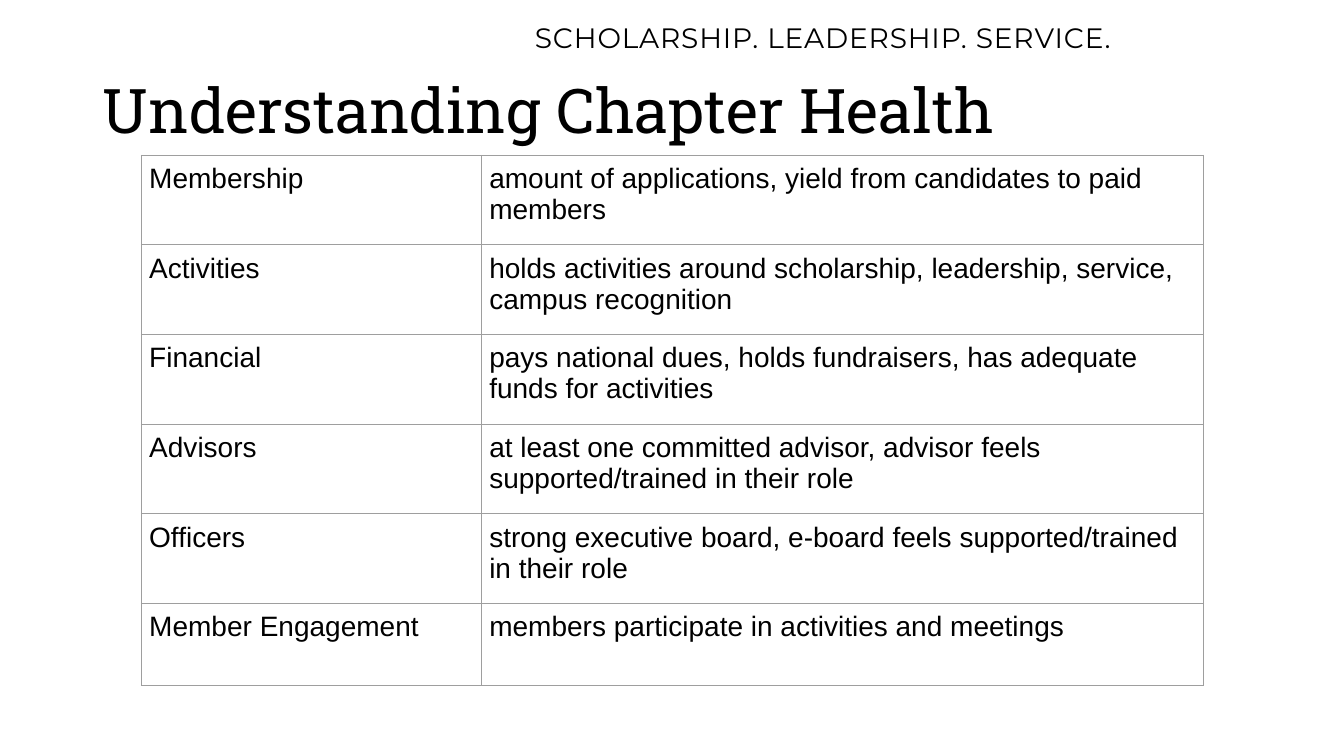
from lxml import etree
from pptx import Presentation
from pptx.dml.color import RGBColor
from pptx.enum.text import MSO_ANCHOR, PP_ALIGN
from pptx.oxml.ns import qn
from pptx.util import Cm, Pt

MIDDLE = MSO_ANCHOR.MIDDLE
TOP = MSO_ANCHOR.TOP
LEFT = PP_ALIGN.LEFT

MOTTO = "SCHOLARSHIP. LEADERSHIP. SERVICE."
TITLE = "Understanding Chapter Health"
HEALTH_AREAS = [
    ("Membership", "amount of applications, yield from candidates to paid members"),
    ("Activities", "holds activities around scholarship, leadership, service, campus recognition"),
    ("Financial", "pays national dues, holds fundraisers, has adequate funds for activities"),
    ("Advisors", "at least one committed advisor, advisor feels supported/trained in their role"),
    ("Officers", "strong executive board, e-board feels supported/trained in their role"),
    ("Member Engagement", "members participate in activities and meetings"),
]

COLORS = {"text": "000000", "border": "9E9E9E"}
COLUMN_WIDTHS = (8.57, 18.19)
ROW_HEIGHT, LAST_ROW_HEIGHT = 2.26, 2.06
CELL_INSET = Cm(0.2)
BORDER_WIDTH = Pt(0.6)


def write_text(frame, text, font, size, anchor=TOP, wrap=True, line_spacing=None, tracking=None):
    frame.word_wrap = wrap
    frame.vertical_anchor = anchor
    paragraph = frame.paragraphs[0]
    paragraph.alignment = LEFT
    if line_spacing:
        paragraph.line_spacing = line_spacing
    run = paragraph.add_run()
    run.text = text
    run.font.name = font
    run.font.size = Pt(size)
    run.font.color.rgb = RGBColor.from_string(COLORS["text"])
    if tracking:
        run.font._element.set("spc", str(round(tracking * 100)))


def add_borders(cell):
    properties = cell._tc.get_or_add_tcPr()
    for position, side in enumerate(("a:lnL", "a:lnR", "a:lnT", "a:lnB")):
        line = etree.Element(qn(side), w=str(BORDER_WIDTH))
        fill = etree.SubElement(line, qn("a:solidFill"))
        etree.SubElement(fill, qn("a:srgbClr"), val=COLORS["border"])
        properties.insert(position, line)


def add_health_table(slide):
    heights = [ROW_HEIGHT] * (len(HEALTH_AREAS) - 1) + [LAST_ROW_HEIGHT]
    table = slide.shapes.add_table(
        len(HEALTH_AREAS), len(COLUMN_WIDTHS),
        Cm(3.56), Cm(3.91), Cm(sum(COLUMN_WIDTHS)), Cm(sum(heights)),
    ).table
    table.first_row = False
    table.horz_banding = False
    for column, width in zip(table.columns, COLUMN_WIDTHS):
        column.width = Cm(width)
    for row, height, area in zip(table.rows, heights, HEALTH_AREAS):
        row.height = Cm(height)
        for cell, text in zip(row.cells, area):
            cell.fill.background()
            cell.margin_left = cell.margin_right = CELL_INSET
            cell.margin_top = cell.margin_bottom = CELL_INSET
            write_text(cell.text_frame, text, "Arial", 20)
            add_borders(cell)


def main():
    presentation = Presentation()
    presentation.slide_width = Cm(33.87)
    presentation.slide_height = Cm(19.05)
    slide = presentation.slides.add_slide(presentation.slide_layouts[5])

    motto = slide.shapes.add_textbox(Cm(13.23), Cm(0.38), Cm(15.52), Cm(1.12))
    write_text(motto.text_frame, MOTTO, "Montserrat", 20, wrap=False, tracking=0.6)

    title = slide.shapes.title
    title.left, title.top, title.width, title.height = Cm(2.34), Cm(1.02), Cm(29.21), Cm(3.68)
    write_text(title.text_frame, TITLE, "Roboto Slab", 44, anchor=MIDDLE, line_spacing=0.9)

    add_health_table(slide)
    presentation.save("out.pptx")


if __name__ == "__main__":
    main()
